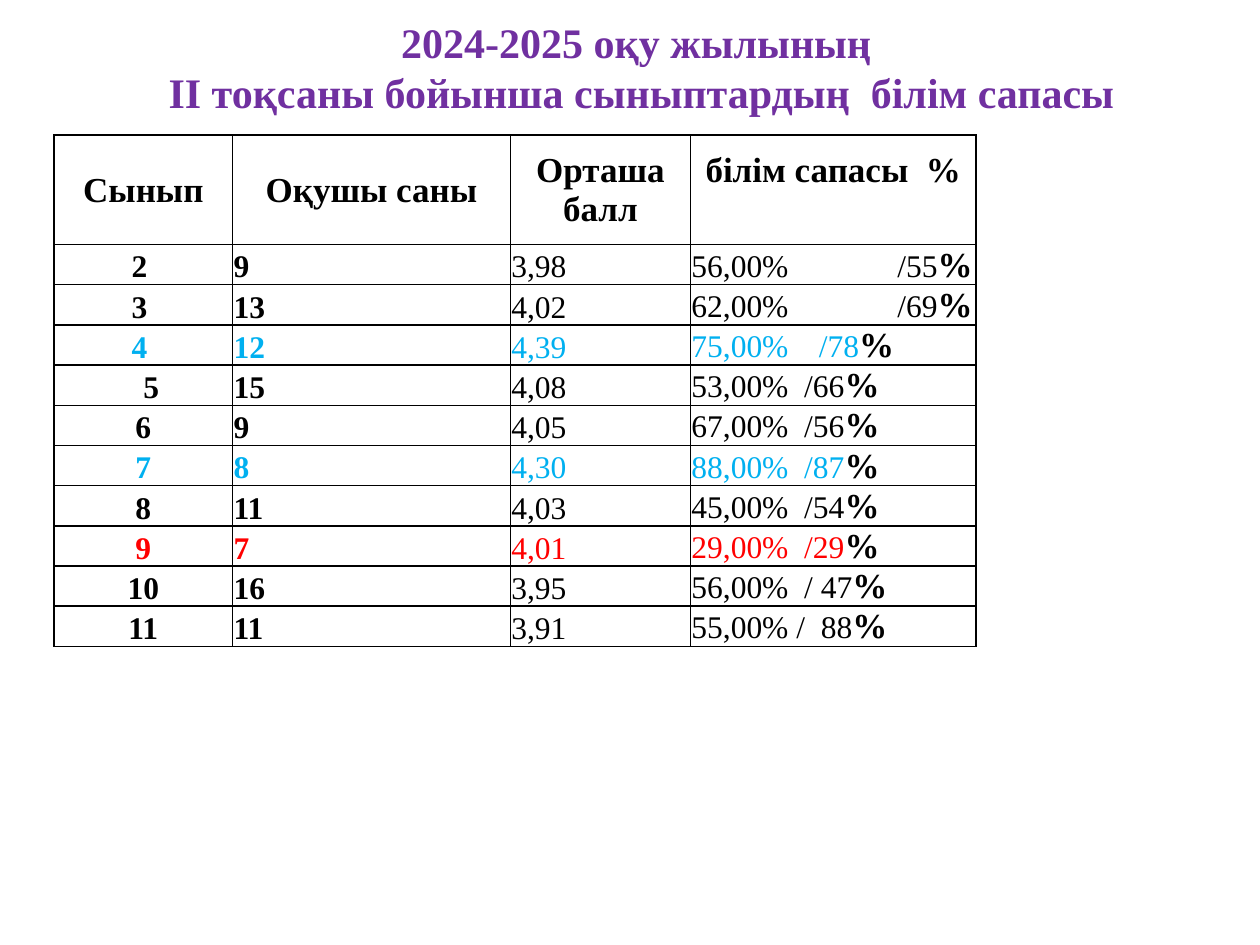
from lxml.etree import SubElement
from pptx import Presentation
from pptx.dml.color import RGBColor
from pptx.enum.text import MSO_ANCHOR, MSO_AUTO_SIZE, PP_ALIGN
from pptx.oxml.ns import qn
from pptx.util import Cm, Pt

FONT = "Times New Roman"
BLACK = RGBColor(0x00, 0x00, 0x00)
WHITE = RGBColor(0xFF, 0xFF, 0xFF)
PURPLE = RGBColor(0x70, 0x30, 0xA0)
BLUE = RGBColor(0x00, 0xB0, 0xF0)
RED = RGBColor(0xFF, 0x00, 0x00)

# Content
TITLE_LINES = ["2024-2025 оқу жылының ", "ІІ тоқсаны бойынша сыныптардың  білім сапасы"]
HEADERS = ["Сынып", "Оқушы саны", "Орташа балл", "білім сапасы  %"]
# Class, pupils, average mark, quality (the closing % is set apart), colour
CLASSES = [
    ("2 ", "9", "3,98", "56,00%\t/55", BLACK),
    ("3 ", "13", "4,02", "62,00%\t/69", BLACK),
    ("4 ", "12", "4,39", "75,00%\t/78", BLUE),
    ("5", "15", "4,08", "53,00%  /66", BLACK),
    ("6", "9", "4,05", "67,00%  /56", BLACK),
    ("7", "8", "4,30", "88,00%  /87", BLUE),
    ("8", "11", "4,03", "45,00%  /54", BLACK),
    ("9", "7", "4,01", "29,00%  /29", RED),
    ("10", "16", "3,95", "56,00%  / 47", BLACK),
    ("11", "11", "3,91", "55,00% /  88", BLACK),
]
TAB_STOPS = {"2 ": Cm(4.15), "3 ": Cm(4.15), "4 ": Cm(2.57)}

# Measures
COLUMN_WIDTHS = [Cm(3.6), Cm(5.6), Cm(3.63), Cm(5.76)]
HEADER_HEIGHT = Cm(2.21)
ROW_HEIGHT = Cm(0.81)
INSET = Cm(0.02)


def add_run(paragraph, text, size, color, bold=True):
    run = paragraph.add_run()
    run.text = text
    run.font.name = FONT
    run.font.size = Pt(size)
    run.font.bold = bold
    run.font.color.rgb = color


def set_borders(cell):
    properties = cell._tc.get_or_add_tcPr()
    for position, side in enumerate(("a:lnL", "a:lnR", "a:lnT", "a:lnB")):
        line = SubElement(properties, qn(side), w=str(Pt(1)))
        fill = SubElement(line, qn("a:solidFill"))
        SubElement(fill, qn("a:srgbClr"), val=str(BLACK))
        properties.remove(line)
        properties.insert(position, line)


def add_tab_stop(paragraph, position):
    tab_list = SubElement(paragraph._p.get_or_add_pPr(), qn("a:tabLst"))
    SubElement(tab_list, qn("a:tab"), pos=str(position), algn="l")


def prepare_cell(cell, anchor, alignment):
    cell.fill.solid()
    cell.fill.fore_color.rgb = WHITE
    cell.margin_left = cell.margin_right = cell.margin_top = INSET
    cell.margin_bottom = 0
    cell.vertical_anchor = anchor
    set_borders(cell)
    paragraph = cell.text_frame.paragraphs[0]
    paragraph.alignment = alignment
    return paragraph


def add_title(slide):
    title = slide.shapes.title
    title.left, title.top, title.width, title.height = Cm(1.5), Cm(0.74), Cm(22.86), Cm(1.2)
    frame = title.text_frame
    frame.auto_size = MSO_AUTO_SIZE.NONE
    frame.word_wrap = True
    frame.vertical_anchor = MSO_ANCHOR.MIDDLE
    paragraph = frame.paragraphs[0]
    paragraph.alignment = PP_ALIGN.CENTER
    for index, line in enumerate(TITLE_LINES):
        if index:
            paragraph.add_line_break()
        add_run(paragraph, line, 24, PURPLE)


def add_quality_table(slide):
    height = HEADER_HEIGHT + ROW_HEIGHT * len(CLASSES)
    table = slide.shapes.add_table(len(CLASSES) + 1, len(HEADERS), Cm(1.09), Cm(2.72),
                                   sum(COLUMN_WIDTHS), height).table
    for column, width in zip(table.columns, COLUMN_WIDTHS):
        column.width = width
    for index, row in enumerate(table.rows):
        row.height = ROW_HEIGHT if index else HEADER_HEIGHT

    # Header row; the last heading sits a little higher
    for index, header in enumerate(HEADERS):
        paragraph = prepare_cell(table.cell(0, index), MSO_ANCHOR.MIDDLE, PP_ALIGN.CENTER)
        add_run(paragraph, header, 20, BLACK)
    table.cell(0, len(HEADERS) - 1).margin_bottom = Cm(0.81)

    # One row per class
    for row_index, (*values, color) in enumerate(CLASSES, start=1):
        for index, value in enumerate(values):
            alignment = PP_ALIGN.LEFT if index else PP_ALIGN.CENTER
            paragraph = prepare_cell(table.cell(row_index, index), MSO_ANCHOR.BOTTOM, alignment)
            add_run(paragraph, value, 18, color, bold=index < 2)
        add_run(paragraph, "%", 20, BLACK)
        if values[0] in TAB_STOPS:
            add_tab_stop(paragraph, TAB_STOPS[values[0]])
        if values[0] == "5":
            table.cell(row_index, 0).margin_left = Cm(0.34)


def main():
    presentation = Presentation()
    presentation.slide_width, presentation.slide_height = Cm(25.4), Cm(19.05)
    slide = presentation.slides.add_slide(presentation.slide_layouts[5])
    add_title(slide)
    add_quality_table(slide)
    presentation.save("out.pptx")


if __name__ == "__main__":
    main()
